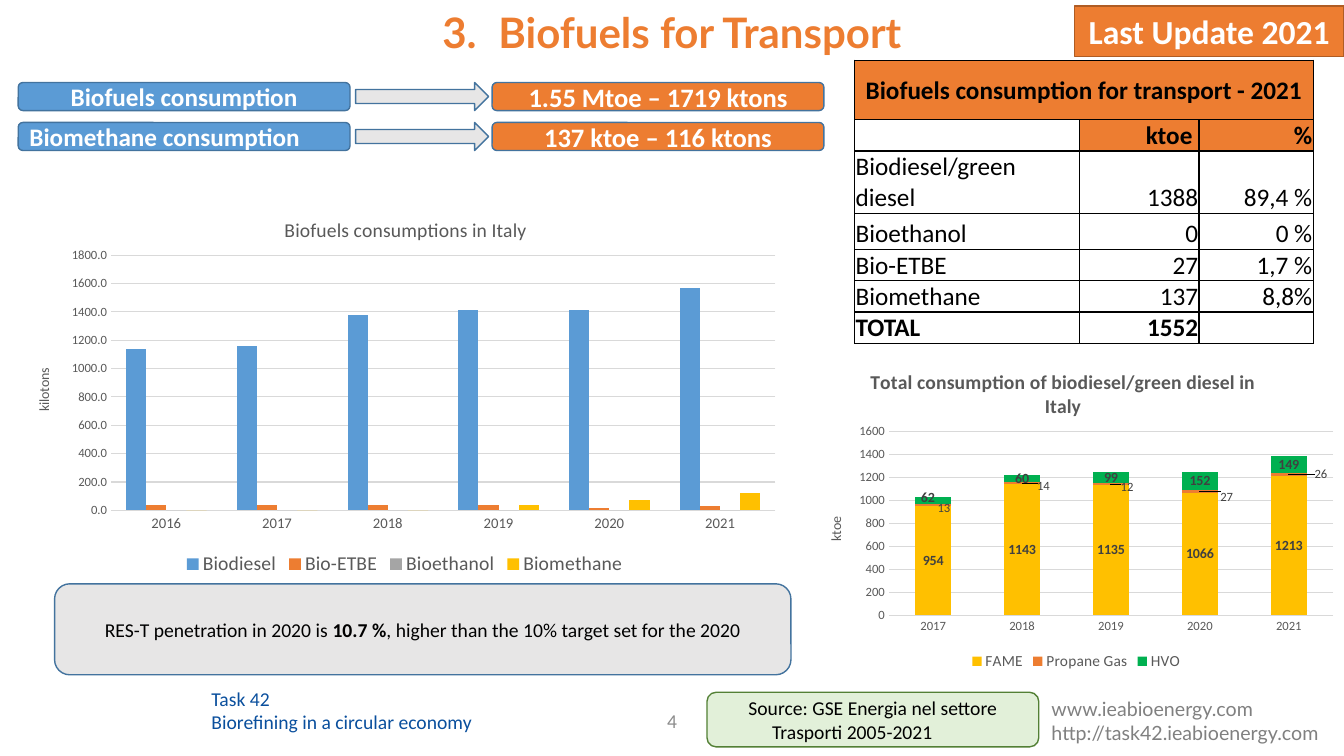
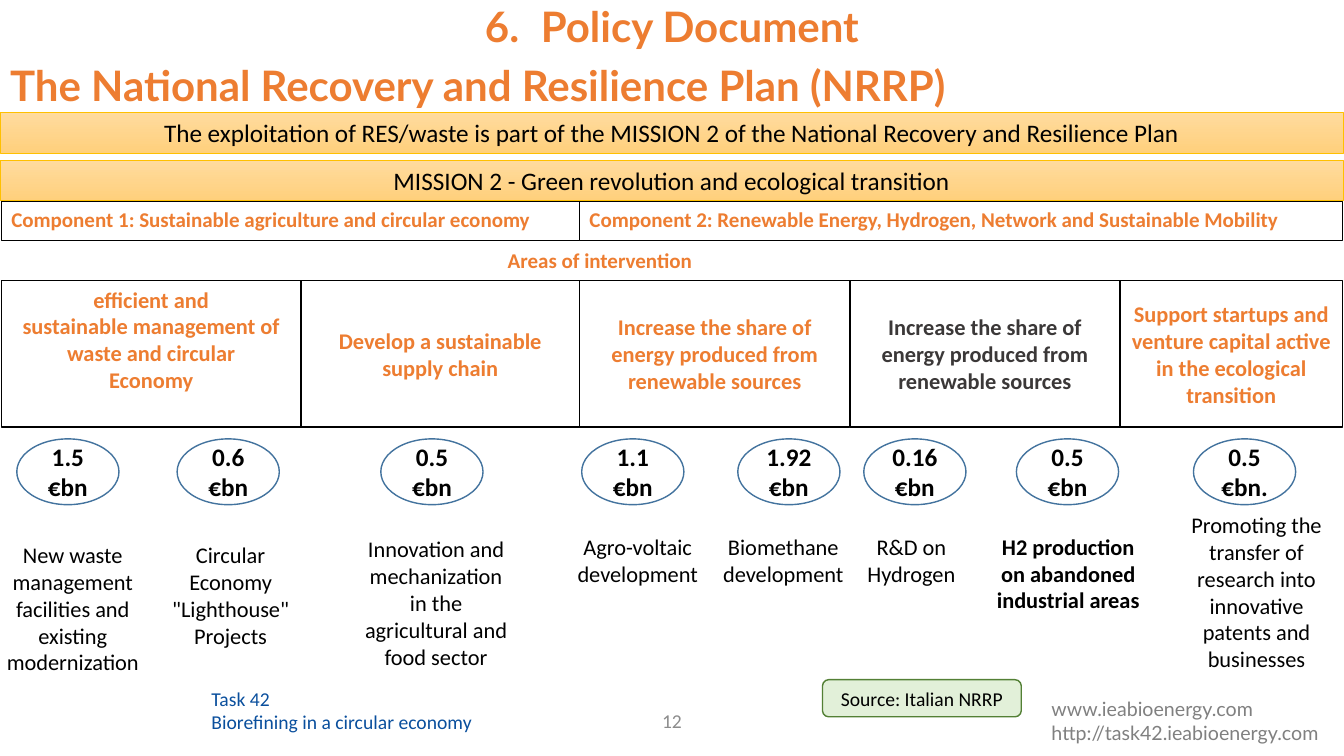
"""Build two slides on biofuels for transport and the national recovery plan."""
from itertools import product

from pptx import Presentation
from pptx.chart.data import CategoryChartData
from pptx.dml.color import RGBColor
from pptx.enum.chart import XL_CHART_TYPE, XL_LEGEND_POSITION, XL_TICK_MARK
from pptx.enum.shapes import MSO_SHAPE
from pptx.enum.text import MSO_ANCHOR, MSO_AUTO_SIZE, PP_ALIGN
from pptx.oxml import parse_xml
from pptx.oxml.ns import nsdecls, qn
from pptx.util import Pt

LEFT, CENTRE, RIGHT = PP_ALIGN.LEFT, PP_ALIGN.CENTER, PP_ALIGN.RIGHT
TOP, MIDDLE, BOTTOM = MSO_ANCHOR.TOP, MSO_ANCHOR.MIDDLE, MSO_ANCHOR.BOTTOM
RECT, ROUND = MSO_SHAPE.RECTANGLE, MSO_SHAPE.ROUNDED_RECTANGLE
ARROW, OVAL = MSO_SHAPE.RIGHT_ARROW, MSO_SHAPE.OVAL
CLUSTERED, STACKED = XL_CHART_TYPE.COLUMN_CLUSTERED, XL_CHART_TYPE.COLUMN_STACKED
NO_TICK, LEGEND_BOTTOM = XL_TICK_MARK.NONE, XL_LEGEND_POSITION.BOTTOM

ORANGE, BLUE, YELLOW, GREEN = "ED7D31", "5B9BD5", "FFC000", "00B050"
BLACK, WHITE, PALE, EDGE = "000000", "FFFFFF", "E7E6E6", "43739E"
MINT, MOSS, TEXT_GREY, GRID = "E2F0D9", "538035", "595959", "D9D9D9"

colour = RGBColor.from_string


def add_run(para, text, size, ink=BLACK, bold=False, font="Calibri"):
    """Append one formatted run to a paragraph."""
    span = para.add_run()
    span.text = text
    span.font.name, span.font.size, span.font.bold = font, Pt(size), bold
    span.font.color.rgb = colour(ink)


def add_box(page, place, lines, size=14, ink=BLACK, bold=False, align=CENTRE, anchor=MIDDLE,
            kind=None, fill=None, line=None, inset=7.2, font="Calibri"):
    """Add a text box, or a preset shape, with one paragraph per line."""
    bounds = [Pt(value) for value in place]
    if kind is None:
        box = page.shapes.add_textbox(*bounds)
    else:
        box = page.shapes.add_shape(kind, *bounds)
        box.shadow.inherit = False
        if fill:
            box.fill.solid()
            box.fill.fore_color.rgb = colour(fill)
        else:
            box.fill.background()
        if line:
            box.line.color.rgb = colour(line)
            box.line.width = Pt(1)
        else:
            box.line.fill.background()
    frame = box.text_frame
    frame.word_wrap = True
    frame.vertical_anchor = anchor
    frame.margin_left = frame.margin_right = Pt(inset)
    for index, text in enumerate(lines):
        para = frame.add_paragraph() if index else frame.paragraphs[0]
        para.alignment = align
        add_run(para, text, size, ink, bold, font)
    return box


deck = Presentation()
deck.slide_width, deck.slide_height = Pt(960), Pt(540)

pages = []
for number, start, top, titles in [
    ("4", 3, 4.3, ["Biofuels for Transport"]),
    ("12", 6, 0, ["Policy Document", "The National Recovery and Resilience Plan (NRRP)"]),
]:
    page = deck.slides.add_slide(deck.slide_layouts[5])
    pages.append(page)
    heading = page.shapes.title
    heading.left, heading.top, heading.width, heading.height = Pt(0), Pt(top), Pt(960), Pt(68)
    frame = heading.text_frame
    frame.auto_size, frame.vertical_anchor = MSO_AUTO_SIZE.NONE, TOP
    for index, text in enumerate(titles):
        para = frame.add_paragraph() if index else frame.paragraphs[0]
        if index == 0:
            properties = para._p.get_or_add_pPr()
            properties.set("marL", str(Pt(40)))
            properties.set("indent", str(-Pt(40)))
            properties.append(parse_xml(
                f'<a:buAutoNum {nsdecls("a")} type="arabicPeriod" startAt="{start}"/>'))
        para.alignment = LEFT if index else CENTRE
        para.line_spacing = Pt(32.5)
        para.space_before = Pt(10 if index else 0)
        add_run(para, text, 30, ORANGE, True, "Lato")
    add_box(page, (399, 500, 162, 29), [number], ink="8C8C8C")
    add_box(page, (144, 487, 216, 41), ["Task 42", "Biorefining in a circular economy"],
            ink="0A4F9D", align=LEFT, anchor=TOP)
    add_box(page, (744, 494.5, 216, 41),
            ["www.ieabioenergy.com", "http://task42.ieabioenergy.com"],
            ink="808080", align=LEFT, anchor=TOP, font="Lato")

transport, policy = pages

add_box(transport, (767.5, 4.3, 192.5, 36), ["Last Update 2021"], 24, WHITE, True,
        anchor=TOP, kind=RECT, fill=ORANGE, line="AF5C24")
for row, (label, align, amount) in enumerate([
    ("Biofuels consumption", CENTRE, "1.55 Mtoe – 1719 ktons"),
    ("Biomethane consumption", LEFT, "137 ktoe – 116 ktons"),
]):
    top = 59 + 28.5 * row
    add_box(transport, (13, top, 237, 20), [label], 18, WHITE, True, align,
            kind=ROUND, fill=BLUE, line=EDGE)
    add_box(transport, (254, top, 95, 20), [], kind=ARROW, fill=PALE, line=EDGE)
    add_box(transport, (351.5, top, 237, 20), [amount], 19, WHITE, True,
            kind=ROUND, fill=ORANGE, line=EDGE)
target = add_box(transport, (39, 417, 526, 65), ["RES-T penetration in 2020 is "],
                 kind=ROUND, fill=PALE, line=EDGE).text_frame.paragraphs[0]
add_run(target, "10.7 %", 14, bold=True)
add_run(target, ", higher than the 10% target set for the 2020", 14)
add_box(transport, (505, 494.5, 237, 39),
        ["Source: GSE Energia nel settore Trasporti 2005-2021\t"],
        kind=ROUND, fill=MINT, line=MOSS)

rows = [
    ("Biofuels consumption for transport - 2021", "", ""),
    ("", "ktoe ", "%"),
    ("Biodiesel/green diesel", "1388", "89,4 %"),
    ("Bioethanol", "0", "0 %"),
    ("Bio-ETBE", "27", "1,7 %"),
    ("Biomethane", "137", "8,8%"),
    ("TOTAL", "1552", ""),
]
table = transport.shapes.add_table(len(rows), 3, Pt(610.5), Pt(43), Pt(327.5), Pt(201)).table
table.first_row = table.horz_banding = False
for column, width in zip(table.columns, (160.5, 85.5, 81.5)):
    column.width = Pt(width)
for row, height in zip(table.rows, (42.5, 22, 44.5, 26, 22, 22, 22)):
    row.height = Pt(height)
for row, column in product(range(len(rows)), range(3)):
    cell = table.cell(row, column)
    cell.margin_left = cell.margin_right = cell.margin_top = Pt(0.7)
    cell.margin_bottom = Pt(0)
    cell.vertical_anchor = BOTTOM if row else MIDDLE
    if row == 0 or (row == 1 and column):
        cell.fill.solid()
        cell.fill.fore_color.rgb = colour(ORANGE)
    else:
        cell.fill.background()
    borders = [parse_xml(
        f'<a:{side} {nsdecls("a")} w="{Pt(1)}"><a:solidFill><a:srgbClr val="{BLACK}"/>'
        f'</a:solidFill></a:{side}>') for side in ("lnL", "lnR", "lnT", "lnB")]
    cell._tc.get_or_add_tcPr()[0:0] = borders
    para = cell.text_frame.paragraphs[0]
    para.alignment = CENTRE if row == 0 else RIGHT if column else LEFT
    if rows[row][column]:
        add_run(para, rows[row][column], 18, bold=row in (0, 1, len(rows) - 1))
table.cell(0, 0).merge(table.cell(0, 2))
table.cell(2, 0).margin_right = Pt(12)

charts = [
    dict(kind=CLUSTERED, place=(13, 138, 552, 276.5), title=["Biofuels consumptions in Italy"],
         bold=False, unit="kilotons", top=1800, format="0.0", category_size=10.5,
         legend_size=14, axis_line=None, overlap=0, title_at=(0.34, 0.05),
         plot_at=(0.12, 0.16, 0.86, 0.66), years=range(2016, 2022), labels=[], offsets={},
         series=[("Biodiesel", BLUE, (1140, 1160, 1380, 1410, 1410, 1570)),
                 ("Bio-ETBE", ORANGE, (40, 40, 40, 40, 20, 30)),
                 ("Bioethanol", "A5A5A5", (0, 0, 0, 0, 0, 0)),
                 ("Biomethane", YELLOW, (0, 0, 0, 40, 70, 120))]),
    dict(kind=STACKED, place=(577.5, 247, 382.5, 235),
         title=["Total consumption of biodiesel/green diesel in", "Italy"],
         bold=True, unit="ktoe", top=1600, format="General", category_size=9,
         legend_size=11, axis_line=GRID, overlap=100, title_at=(0.11, 0.06),
         plot_at=(0.15, 0.26, 0.83, 0.56), years=range(2017, 2022),
         labels=[(10, True), (9, False), (10, True)],
         offsets={1: [(0.02, 0.01), (0.04, 0.01), (0.03, 0.01), (0.05, 0.02), (0.06, 0)],
                  2: [(-0.01, -0.01)]},
         series=[("FAME", YELLOW, (954, 1143, 1135, 1066, 1213)),
                 ("Propane Gas", ORANGE, (13, 14, 12, 27, 26)),
                 ("HVO", GREEN, (62, 60, 99, 152, 149))]),
]
for info in charts:
    data = CategoryChartData()
    data.categories = [str(year) for year in info["years"]]
    for name, _, values in info["series"]:
        data.add_series(name, values)
    chart = transport.shapes.add_chart(
        info["kind"], *[Pt(value) for value in info["place"]], data).chart
    chart.font.name, chart.font.size = "Calibri", Pt(10)
    chart.font.color.rgb = colour(BLACK)
    frame = chart.chart_title.text_frame
    for index, text in enumerate(info["title"]):
        para = frame.add_paragraph() if index else frame.paragraphs[0]
        add_run(para, text, 14, TEXT_GREY, info["bold"])
    chart.has_legend = True
    chart.legend.position, chart.legend.include_in_layout = LEGEND_BOTTOM, False

    values, categories = chart.value_axis, chart.category_axis
    values.minimum_scale, values.maximum_scale, values.major_unit = 0, info["top"], 200
    values.tick_labels.number_format = info["format"]
    values.tick_labels.number_format_is_linked = False
    values.major_gridlines.format.line.color.rgb = colour(GRID)
    values.major_gridlines.format.line.width = Pt(0.75)
    values.format.line.fill.background()
    frame = values.axis_title.text_frame
    frame._txBody.bodyPr.set("rot", "-5400000")
    add_run(frame.paragraphs[0], info["unit"], 10, TEXT_GREY)
    if info["axis_line"]:
        categories.format.line.color.rgb = colour(info["axis_line"])
        categories.format.line.width = Pt(0.75)
    else:
        categories.format.line.fill.background()
    for axis in (values, categories):
        axis.major_tick_mark = axis.minor_tick_mark = NO_TICK
    for font, size in [(values.tick_labels.font, 9),
                       (categories.tick_labels.font, info["category_size"]),
                       (chart.legend.font, info["legend_size"])]:
        font.name, font.size = "Calibri", Pt(size)
        font.color.rgb = colour(TEXT_GREY)

    plot = chart.plots[0]
    plot.gap_width, plot.overlap, plot.vary_by_categories = 150, info["overlap"], False
    for series, (_, fill, _) in zip(plot.series, info["series"]):
        series.format.fill.solid()
        series.format.fill.fore_color.rgb = colour(fill)

    edges = [("xMode", "edge"), ("yMode", "edge")]
    layouts = [
        (chart._chartSpace.find(".//" + qn("c:plotArea")), 0,
         [("layoutTarget", "inner"), *edges, *zip("xywh", info["plot_at"])]),
        (chart._chartSpace.find(".//" + qn("c:title")), 1,
         [*edges, *zip("xy", info["title_at"])]),
    ]
    for index, (size, bold) in enumerate(info["labels"]):
        series = plot.series[index]
        series.data_labels.show_value = True
        fonts = [series.data_labels.font]
        for point, offset in enumerate(info["offsets"].get(index, [])):
            label = series.points[point].data_label
            fonts.append(label.font)
            layouts.append((label._get_or_add_dLbl(), 1, list(zip("xy", offset))))
        for font in fonts:
            font.name, font.size, font.bold = "Calibri", Pt(size), bold
            font.color.rgb = colour("404040")
    for parent, position, settings in layouts:
        for old in parent.findall(qn("c:layout")):
            parent.remove(old)
        inner = "".join(f'<c:{tag} val="{value}"/>' for tag, value in settings)
        parent.insert(position, parse_xml(
            f'<c:layout {nsdecls("c")}><c:manualLayout>{inner}</c:manualLayout></c:layout>'))

for top, text in [
    (80.5, "The exploitation of RES/waste is part of the MISSION 2 of the National Recovery "
           "and Resilience Plan"),
    (114.5, "MISSION 2 - Green revolution and ecological transition"),
]:
    band = add_box(policy, (0, top, 959.5, 29), [text], 18, anchor=TOP, kind=RECT, line=YELLOW)
    band.line.width = Pt(0.5)
    band.fill.gradient()
    band.fill.gradient_angle = 270
    for stop, shade in zip(band.fill.gradient_stops, ("FFDB9E", "FFD07C")):
        stop.color.rgb = colour(shade)

for left, width, text in [
    (1, 413, "Component 1: Sustainable agriculture and circular economy"),
    (414, 545, "Component 2: Renewable Energy, Hydrogen, Network and Sustainable Mobility"),
]:
    add_box(policy, (left, 144, width, 28), [text], 15, ORANGE, True, LEFT, TOP,
            kind=RECT, fill=WHITE, line=BLACK)
add_box(policy, (222, 173, 413, 25), ["Areas of intervention"], 15, ORANGE, True,
        anchor=TOP, kind=RECT, fill=WHITE)

share = ["Increase the share of energy produced from renewable sources"]
left = 1
for width, ink, anchor, lines in [
    (214, ORANGE, TOP, ["efficient and", "sustainable management of waste and circular",
                        "Economy"]),
    (199, ORANGE, MIDDLE, ["Develop a sustainable supply chain"]),
    (193, ORANGE, MIDDLE, share),
    (193, "3B3838", MIDDLE, share),
    (159, ORANGE, MIDDLE, ["Support startups and venture capital active in the ecological "
                           "transition"]),
]:
    add_box(policy, (left, 200.5, width, 104.5), lines, 16, ink, True, anchor=anchor,
            kind=RECT, fill=WHITE, line=BLACK)
    left += width

for oval_left, amount, unit, place, bold, text in [
    (12, "1.5", "€bn", (0, 383, 104, 104), False,
     "New waste management facilities and existing modernization"),
    (126.5, "0.6", "€bn", (121.5, 383, 86.5, 85), False,
     'Circular Economy "Lighthouse" Projects'),
    (272, "0.5", "€bn", (260.5, 379, 102, 104), False,
     "Innovation and mechanization in the agricultural and food sector"),
    (415.5, "1.1", "€bn", (400.5, 377, 110, 46), False, "Agro-voltaic development"),
    (527, "1.92", "€bn", (504.5, 377, 110, 46), False, "Biomethane development"),
    (617, "0.16", "€bn", (596, 377, 110, 46), False, "R&D on Hydrogen"),
    (726, "0.5", "€bn", (708, 377, 110, 65), True,
     "H2 production on abandoned industrial areas"),
    (852.5, "0.5", "€bn.", (842.5, 361.5, 110, 124), False,
     "Promoting the transfer of research into innovative patents and businesses"),
]:
    add_box(policy, (oval_left, 313.5, 73, 47), [amount, unit], 18, bold=True,
            kind=OVAL, line=EDGE, inset=0)
    add_box(policy, place, [text], 16, bold=bold, anchor=TOP, inset=0)
add_box(policy, (587.5, 485.5, 142, 26.5), ["Source: Italian NRRP"],
        kind=ROUND, fill=MINT, line=MOSS)

deck.save("out.pptx")
